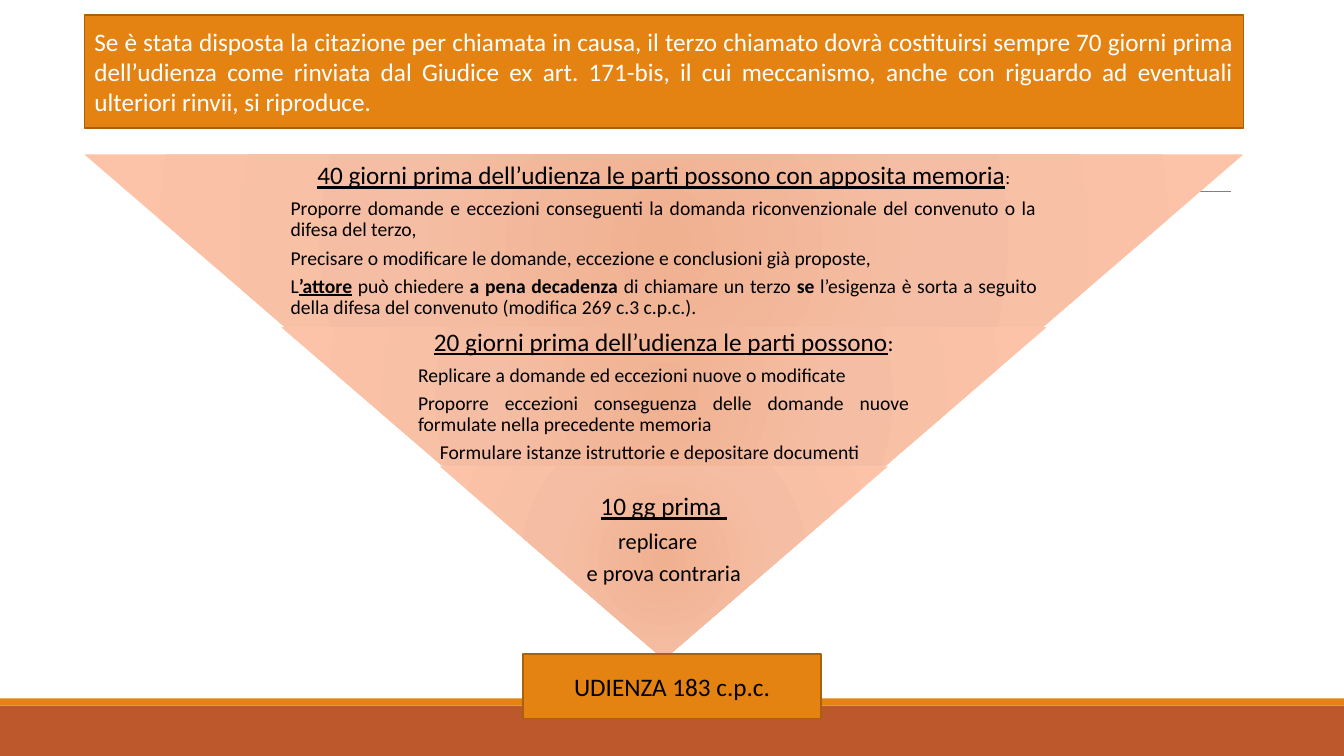
from lxml import etree
from pptx import Presentation
from pptx.dml.color import RGBColor
from pptx.enum.shapes import MSO_CONNECTOR, MSO_SHAPE
from pptx.enum.text import MSO_ANCHOR, PP_ALIGN
from pptx.oxml import parse_xml
from pptx.oxml.ns import nsdecls, qn
from pptx.util import Cm, Pt

RECT = MSO_SHAPE.RECTANGLE
TRAPEZOID = MSO_SHAPE.TRAPEZOID
STRAIGHT = MSO_CONNECTOR.STRAIGHT
MIDDLE = MSO_ANCHOR.MIDDLE
CENTER = PP_ALIGN.CENTER
JUSTIFY = PP_ALIGN.JUSTIFY

BLACK = RGBColor(0x00, 0x00, 0x00)
WHITE = RGBColor(0xFF, 0xFF, 0xFF)
GREY = RGBColor(0x80, 0x80, 0x80)
ORANGE = RGBColor(0xE4, 0x83, 0x12)
BROWN = RGBColor(0xA9, 0x61, 0x0D)
RUST = RGBColor(0xBD, 0x58, 0x2C)
PEACH_STOPS = [
    (0, RGBColor(0xF0, 0xB1, 0x91)),
    (45, RGBColor(0xF5, 0xBE, 0xA4)),
    (100, RGBColor(0xFD, 0xC3, 0xA8)),
]

WIDTH, HEIGHT = 33.87, 19.05
AXIS = 16.73
FUNNEL_TOP = 3.89
SLOPE = 1.161

NOTICE = (
    "Se è stata disposta la citazione per chiamata in causa, il terzo chiamato "
    "dovrà costituirsi sempre 70 giorni prima dell’udienza come rinviata dal "
    "Giudice ex art. 171-bis, il cui meccanismo, anche con riguardo ad eventuali "
    "ulteriori rinvii, si riproduce."
)

# Height, outer width, text width, bottom inset, paragraphs (align, indent, runs)
STAGES = [
    (4.35, 29.21, 18.97, 0.08, [
        (CENTER, 0, [
            ("40 giorni prima dell’udienza le parti possono con apposita memoria", 18, "u"),
            (":", 13, "")]),
        (JUSTIFY, 0, [
            ("Proporre domande e eccezioni conseguenti la domanda riconvenzionale "
             "del convenuto o la difesa del terzo,", 14, "")]),
        (JUSTIFY, 0, [
            ("Precisare o modificare le domande, eccezione e conclusioni già proposte,", 14, "")]),
        (JUSTIFY, 0, [
            ("L", 14, ""),
            ("’attore", 14, "bu"),
            (" può chiedere ", 14, ""),
            ("a pena decadenza ", 14, "b"),
            ("di chiamare un terzo ", 14, ""),
            ("se", 14, "b"),
            (" l’esigenza è sorta a seguito della difesa del convenuto "
             "(modifica 269 c.3 c.p.c.).", 14, "")]),
    ]),
    (3.51, 19.3, 12.55, 0.08, [
        (CENTER, 0, [
            ("20 giorni prima dell’udienza le parti possono", 18, "u"),
            (":", 16, "")]),
        (JUSTIFY, 0, [("Replicare a domande ed eccezioni nuove o modificate", 14, "")]),
        (JUSTIFY, 0, [
            ("Proporre eccezioni conseguenza delle domande nuove formulate nella "
             "precedente memoria", 14, "")]),
        (JUSTIFY, 0.55, [("Formulare istanze istruttorie e depositare documenti", 14, "")]),
    ]),
    (4.72, 11.3, 11.3, 1.08, [
        (CENTER, 0, [("10 gg prima ", 18, "u")]),
        (JUSTIFY, 4.42, [("replicare", 16, "")]),
        (CENTER, 0, [("e prova contraria", 16, "")]),
    ]),
]


class Deck:
    font = "Calibri"

    def __init__(self):
        self.prs = Presentation()
        self.prs.slide_width = Cm(WIDTH)
        self.prs.slide_height = Cm(HEIGHT)
        self.s = self.prs.slides.add_slide(self.prs.slide_layouts[6])

    def shape(self, kind, x, y, w, h):
        sp = self.s.shapes.add_shape(kind, Cm(x), Cm(y), Cm(w), Cm(h))
        sp.shadow.inherit = False
        sp.line.fill.background()
        return sp

    def band(self, x, y, w, h, color):
        sp = self.shape(RECT, x, y, w, h)
        sp.fill.solid()
        sp.fill.fore_color.rgb = color
        return sp

    def box(self, x, y, w, h, text, align, color):
        sp = self.band(x, y, w, h, ORANGE)
        sp.line.color.rgb = BROWN
        sp.line.width = Pt(1.25)
        tf = sp.text_frame
        tf.text = text
        tf.word_wrap = True
        tf.vertical_anchor = MIDDLE
        p = tf.paragraphs[0]
        p.alignment = align
        self.style(p.runs[0], 18, "", color)

    def rule(self, x1, x2, y):
        ln = self.s.shapes.add_connector(STRAIGHT, Cm(x1), Cm(y), Cm(x2), Cm(y))
        ln.line.color.rgb = GREY
        ln.line.width = Pt(0.5)
        etree.SubElement(ln._element.spPr, qn("a:effectLst"))

    def funnel(self, y, w, h):
        sp = self.shape(TRAPEZOID, AXIS - w / 2, y, w, h)
        sp.rotation = 180
        sp.adjustments[0] = SLOPE
        stops = "".join(
            f'<a:gs pos="{pos * 1000}"><a:srgbClr val="{color}"/></a:gs>'
            for pos, color in PEACH_STOPS
        )
        grad = parse_xml(
            f'<a:gradFill {nsdecls("a")}><a:gsLst>{stops}</a:gsLst><a:path path="circle">'
            '<a:fillToRect l="100000" t="100000" r="100000" b="100000"/>'
            '</a:path></a:gradFill>'
        )
        sp._element.spPr.find(qn("a:prstGeom")).addnext(grad)

    def text(self, y, w, h, bottom, paragraphs):
        sp = self.s.shapes.add_textbox(Cm(AXIS - w / 2), Cm(y), Cm(w), Cm(h))
        tf = sp.text_frame
        tf.word_wrap = True
        tf.vertical_anchor = MIDDLE
        tf.margin_left = tf.margin_right = tf.margin_top = Cm(0.08)
        tf.margin_bottom = Cm(bottom)
        for i, (align, indent, runs) in enumerate(paragraphs):
            p = tf.add_paragraph() if i else tf.paragraphs[0]
            p.alignment = align
            p.line_spacing = 0.9
            p.space_after = Pt(0.35 * runs[0][1])
            if indent:
                p._p.get_or_add_pPr().set("marL", str(Cm(indent)))
            for text, size, marks in runs:
                r = p.add_run()
                r.text = text
                self.style(r, size, marks, BLACK)

    def style(self, r, size, marks, color):
        r.font.name = self.font
        r.font.size = Pt(size)
        r.font.bold = "b" in marks
        r.font.underline = "u" in marks
        r.font.color.rgb = color


def main():
    deck = Deck()
    deck.band(0, 17.78, WIDTH, 1.27, RUST)
    deck.band(0, 17.6, WIDTH, 0.18, ORANGE)
    deck.rule(3.33, 31.01, 4.83)
    y = FUNNEL_TOP
    for h, outer, inner, bottom, paragraphs in STAGES:
        deck.funnel(y, outer, h)
        deck.text(y, inner, h, bottom, paragraphs)
        y += h
    deck.box(2.13, 0.38, 29.21, 2.84, NOTICE, JUSTIFY, WHITE)
    deck.box(13.18, 16.48, 7.52, 1.63, "UDIENZA 183 c.p.c.", CENTER, BLACK)
    deck.prs.save("out.pptx")


if __name__ == "__main__":
    main()
